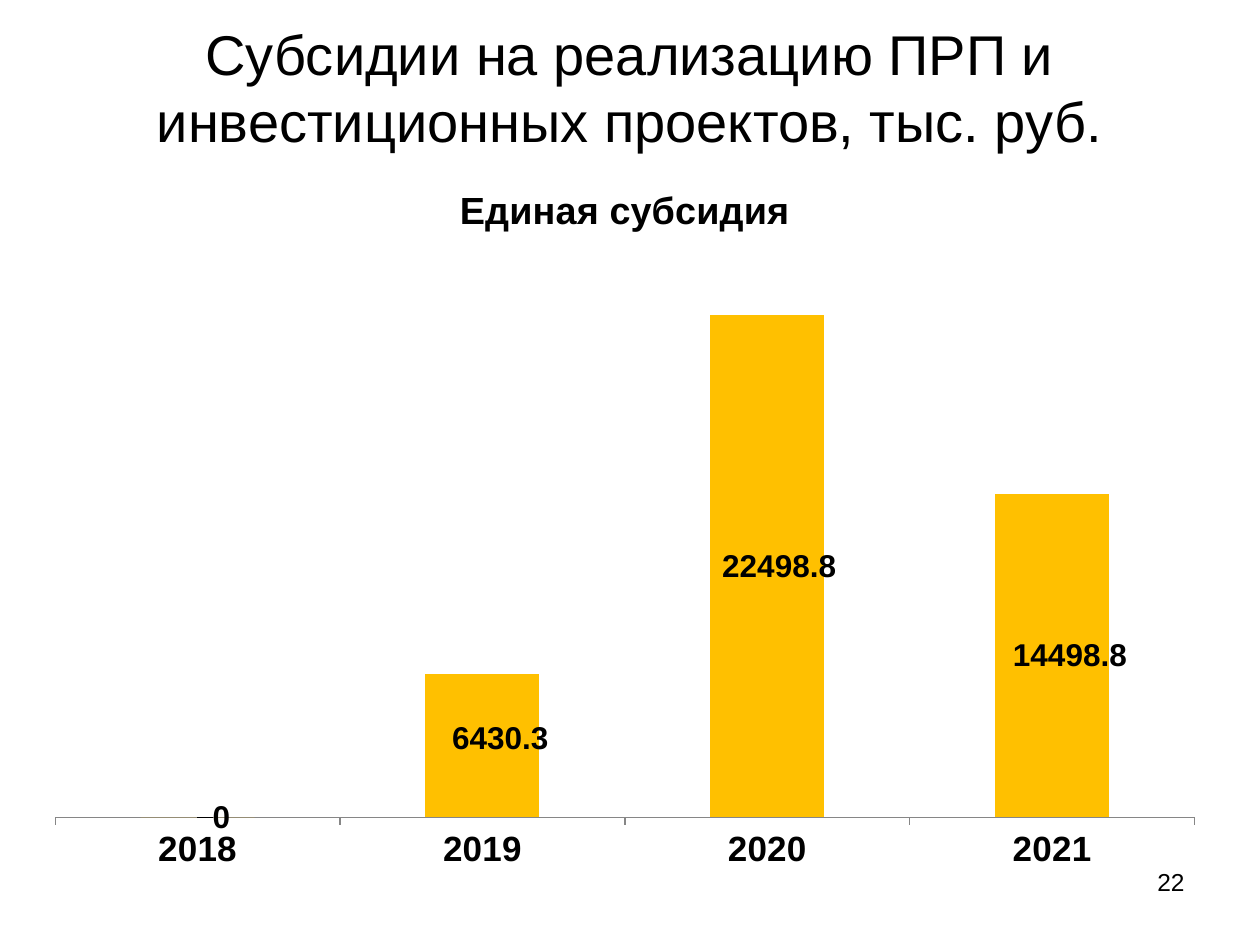
from dataclasses import dataclass
from typing import Any, NamedTuple

from lxml.etree import SubElement
from pptx import Presentation
from pptx.chart.data import CategoryChartData
from pptx.dml.color import RGBColor
from pptx.enum.chart import XL_CHART_TYPE, XL_TICK_LABEL_POSITION, XL_TICK_MARK
from pptx.enum.text import MSO_ANCHOR, PP_ALIGN
from pptx.oxml.ns import qn
from pptx.util import Inches, Pt

WIDE, HIGH = Inches(10), Inches(7.5)


@dataclass(frozen=True)
class Theme:
    face: str = "Arial"
    ink: RGBColor = RGBColor(0, 0, 0)
    gold: RGBColor = RGBColor(0xFF, 0xC0, 0)
    gray: RGBColor = RGBColor(0x86, 0x86, 0x86)
    title: float = 32
    head: float = 21.6
    axis: float = 20
    label: float = 18
    page: float = 14


class Box(NamedTuple):
    left: float
    top: float
    width: float
    height: float

    def size(self) -> tuple[int, ...]:
        return tuple(round(part * unit) for part, unit in zip(self, (WIDE, HIGH) * 2))


class Bar(NamedTuple):
    year: str
    value: float
    shift: tuple[float, float]


THEME = Theme()
TITLE = Box(0.05, 0.04, 0.9, 0.104)
CHART = Box(0.025, 0.167, 0.942, 0.767)
PAGE = Box(0.717, 0.911, 0.233, 0.069)
PLOT = Box(0.02, 0.14, 0.96, 0.77)
HEAD = "Единая субсидия"
BARS = [
    Bar("2018", 0, (0.02, 0)),
    Bar("2019", 6430.3, (0.015, -0.01)),
    Bar("2020", 22498.8, (0.01, 0)),
    Bar("2021", 14498.8, (0.015, 0)),
]


def apply(item: Any, form: dict[str, Any]) -> None:
    for name, value in form.items():
        setattr(item, name, value)


def style(font: Any, size: float, bold: bool = False) -> None:
    apply(font, {"name": THEME.face, "size": Pt(size), "bold": bold})
    font.color.rgb = THEME.ink


def write(frame: Any, text: str, size: float, align: PP_ALIGN, anchor: MSO_ANCHOR) -> None:
    apply(frame, {"text": text, "word_wrap": True, "vertical_anchor": anchor})
    line = frame.paragraphs[0]
    line.alignment = align
    style(line.runs[0].font, size)


def place(layout: Any, form: dict[str, Any]) -> None:
    manual = SubElement(layout, qn("c:manualLayout"))
    for tag, value in form.items():
        SubElement(manual, qn(f"c:{tag}")).set("val", str(value))


def draw(slide: Any) -> None:
    data = CategoryChartData()
    data.categories = [bar.year for bar in BARS]
    data.add_series(HEAD, [bar.value for bar in BARS])
    chart = slide.shapes.add_chart(XL_CHART_TYPE.COLUMN_STACKED, *CHART.size(), data).chart
    style(chart.font, THEME.label)
    apply(chart, {"has_legend": False, "has_title": True})
    title = chart.chart_title.text_frame
    title.text = HEAD
    style(title.paragraphs[0].runs[0].font, THEME.head, True)

    axis = chart.category_axis
    apply(axis, {"major_tick_mark": XL_TICK_MARK.OUTSIDE,
                 "minor_tick_mark": XL_TICK_MARK.NONE,
                 "tick_label_position": XL_TICK_LABEL_POSITION.NEXT_TO_AXIS,
                 "has_major_gridlines": False})
    style(axis.tick_labels.font, THEME.axis, True)
    axis.format.line.color.rgb = THEME.gray
    apply(chart.value_axis, {"visible": False, "has_major_gridlines": False,
                             "minimum_scale": 0, "maximum_scale": 25000})

    plot = chart.plots[0]
    apply(plot, {"gap_width": 150, "overlap": 100, "vary_by_categories": False})
    row = plot.series[0]
    row.format.fill.solid()
    row.format.fill.fore_color.rgb = THEME.gold
    row.data_labels.show_value = True
    style(row.data_labels.font, THEME.label, True)
    for spot in range(len(BARS)):
        style(row.points[spot].data_label.font, THEME.label, True)

    root = chart.element
    for bar, label in zip(BARS, root.iter(qn("c:dLbl"))):
        layout = SubElement(label, qn("c:layout"))
        label.insert(1, layout)
        place(layout, dict(zip("xy", bar.shift)))
    area = root.find(".//" + qn("c:plotArea"))
    layout = area.find(qn("c:layout"))
    if layout is None:
        layout = SubElement(area, qn("c:layout"))
        area.insert(0, layout)
    place(layout, {"layoutTarget": "inner", "xMode": "edge", "yMode": "edge",
                   **dict(zip("xywh", PLOT))})


def main() -> None:
    deck = Presentation()
    apply(deck, {"slide_width": WIDE, "slide_height": HIGH})
    slide = deck.slides.add_slide(deck.slide_layouts[5])
    title = slide.shapes.title
    apply(title, dict(zip(Box._fields, TITLE.size())))
    write(title.text_frame, "Субсидии на реализацию ПРП и инвестиционных проектов, тыс. руб.",
          THEME.title, PP_ALIGN.CENTER, MSO_ANCHOR.MIDDLE)
    draw(slide)
    page = slide.shapes.add_textbox(*PAGE.size())
    write(page.text_frame, "22", THEME.page, PP_ALIGN.RIGHT, MSO_ANCHOR.TOP)
    deck.save("out.pptx")


if __name__ == "__main__":
    main()
